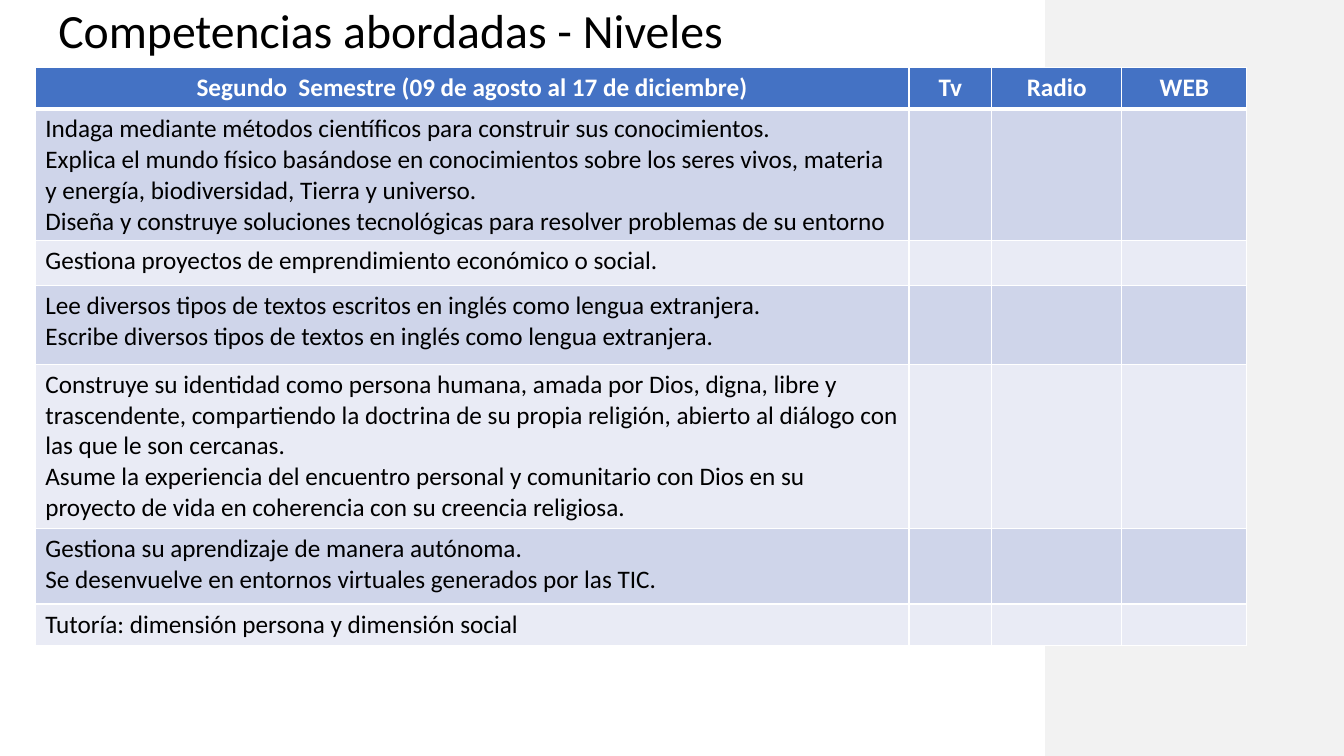
import dataclasses

import lxml.etree
import pptx
import pptx.dml.color
import pptx.enum.shapes
import pptx.enum.text
import pptx.oxml.ns
import pptx.presentation
import pptx.slide
import pptx.table
import pptx.text.text
import pptx.util

Cm = pptx.util.Cm
RGBColor = pptx.dml.color.RGBColor
Align = pptx.enum.text.PP_ALIGN
Anchor = pptx.enum.text.MSO_ANCHOR

WHITE = RGBColor(0xFF, 0xFF, 0xFF)
BLACK = RGBColor(0x00, 0x00, 0x00)
PANEL_GREY = RGBColor(0xF2, 0xF2, 0xF2)
HEADER_BLUE = RGBColor(0x44, 0x72, 0xC4)
BAND_DARK = RGBColor(0xCF, 0xD5, 0xEA)
BAND_LIGHT = RGBColor(0xE9, 0xEB, 0xF5)

FONT = "Calibri"
SLIDE_WIDTH = 33.87
SLIDE_HEIGHT = 19.05
PANEL_LEFT = 26.34
HEADER_HEIGHT = 1.04


@dataclasses.dataclass(frozen=True)
class Column:
    heading: str
    width: float


@dataclasses.dataclass(frozen=True)
class Area:
    height: float
    competencies: tuple[str, ...]


COLUMNS = (
    Column("Segundo  Semestre (09 de agosto al 17 de diciembre)", 22.02),
    Column("Tv", 2.08),
    Column("Radio", 3.28),
    Column("WEB", 3.15),
)

AREAS = (
    Area(3.33, (
        "Indaga mediante métodos científicos para construir sus conocimientos.",
        "Explica el mundo físico basándose en conocimientos sobre los seres vivos, "
        "materia y energía, biodiversidad, Tierra y universo.",
        "Diseña y construye soluciones tecnológicas para resolver problemas de su entorno",
    )),
    Area(1.13, ("Gestiona proyectos de emprendimiento económico o social.",)),
    Area(1.98, (
        "Lee diversos tipos de textos escritos en inglés como lengua extranjera.",
        "Escribe diversos tipos de textos en inglés como lengua extranjera.",
    )),
    Area(4.14, (
        "Construye su identidad como persona humana, amada por Dios, digna, libre y "
        "trascendente, compartiendo la doctrina de su propia religión, abierto al "
        "diálogo con las que le son cercanas.",
        "Asume la experiencia del encuentro personal y comunitario con Dios en su "
        "proyecto de vida en coherencia con su creencia religiosa.",
    )),
    Area(1.9, (
        "Gestiona su aprendizaje de manera autónoma.",
        "Se desenvuelve en entornos virtuales generados por las TIC.",
    )),
    Area(1.04, ("Tutoría: dimensión persona y dimensión social",)),
)


def write_text(
    frame: pptx.text.text.TextFrame,
    lines: tuple[str, ...],
    *,
    size: float = 18,
    color: RGBColor = BLACK,
    bold: bool = False,
    align: Align = Align.LEFT,
    line_spacing: float = 1.0,
) -> None:
    for index, line in enumerate(lines):
        para = frame.add_paragraph() if index else frame.paragraphs[0]
        para.alignment = align
        para.line_spacing = line_spacing
        span = para.add_run()
        span.text = line
        span.font.name = FONT
        span.font.size = pptx.util.Pt(size)
        span.font.bold = bold
        span.font.color.rgb = color


def style_cell(cell: pptx.table._Cell, fill: RGBColor, bottom_width: float = 1) -> None:
    cell.fill.solid()
    cell.fill.fore_color.rgb = fill
    properties = cell._tc.get_or_add_tcPr()
    widths = {"lnL": 1, "lnR": 1, "lnT": 1, "lnB": bottom_width}
    for position, (tag, width) in enumerate(widths.items()):
        border = lxml.etree.Element(pptx.oxml.ns.qn(f"a:{tag}"), w=str(pptx.util.Pt(width)))
        solid = lxml.etree.SubElement(border, pptx.oxml.ns.qn("a:solidFill"))
        lxml.etree.SubElement(solid, pptx.oxml.ns.qn("a:srgbClr"), val=str(WHITE))
        properties.insert(position, border)


def add_panel(page: pptx.slide.Slide) -> None:
    panel = page.shapes.add_shape(
        pptx.enum.shapes.MSO_SHAPE.RECTANGLE,
        Cm(PANEL_LEFT), Cm(0), Cm(SLIDE_WIDTH - PANEL_LEFT), Cm(SLIDE_HEIGHT),
    )
    panel.shadow.inherit = False
    panel.fill.solid()
    panel.fill.fore_color.rgb = PANEL_GREY
    panel.line.fill.background()


def add_title(page: pptx.slide.Slide) -> None:
    box = page.shapes.add_textbox(Cm(1.22), Cm(0.25), Cm(29.21), Cm(1.35))
    box.text_frame.word_wrap = True
    box.text_frame.vertical_anchor = Anchor.MIDDLE
    write_text(
        box.text_frame, ("Competencias abordadas - Niveles",), size=34.1, line_spacing=0.7
    )


def add_competency_table(page: pptx.slide.Slide) -> None:
    heights = [HEADER_HEIGHT, *(area.height for area in AREAS)]
    width = sum(column.width for column in COLUMNS)
    table = page.shapes.add_table(
        len(heights), len(COLUMNS), Cm(0.89), Cm(1.7), Cm(width), Cm(sum(heights))
    ).table
    for row, height in zip(table.rows, heights):
        row.height = Cm(height)
    for index, column in enumerate(COLUMNS):
        table.columns[index].width = Cm(column.width)
        cell = table.cell(0, index)
        style_cell(cell, HEADER_BLUE, bottom_width=3)
        write_text(
            cell.text_frame, (column.heading,), color=WHITE, bold=True, align=Align.CENTER
        )
    for number, area in enumerate(AREAS, start=1):
        for cell in table.rows[number].cells:
            style_cell(cell, BAND_DARK if number % 2 else BAND_LIGHT)
        write_text(table.cell(number, 0).text_frame, area.competencies)


def main() -> None:
    deck: pptx.presentation.Presentation = pptx.Presentation()
    deck.slide_width = Cm(SLIDE_WIDTH)
    deck.slide_height = Cm(SLIDE_HEIGHT)
    page = deck.slides.add_slide(deck.slide_layouts[6])
    add_panel(page)
    add_title(page)
    add_competency_table(page)
    deck.save("out.pptx")


if __name__ == "__main__":
    main()
